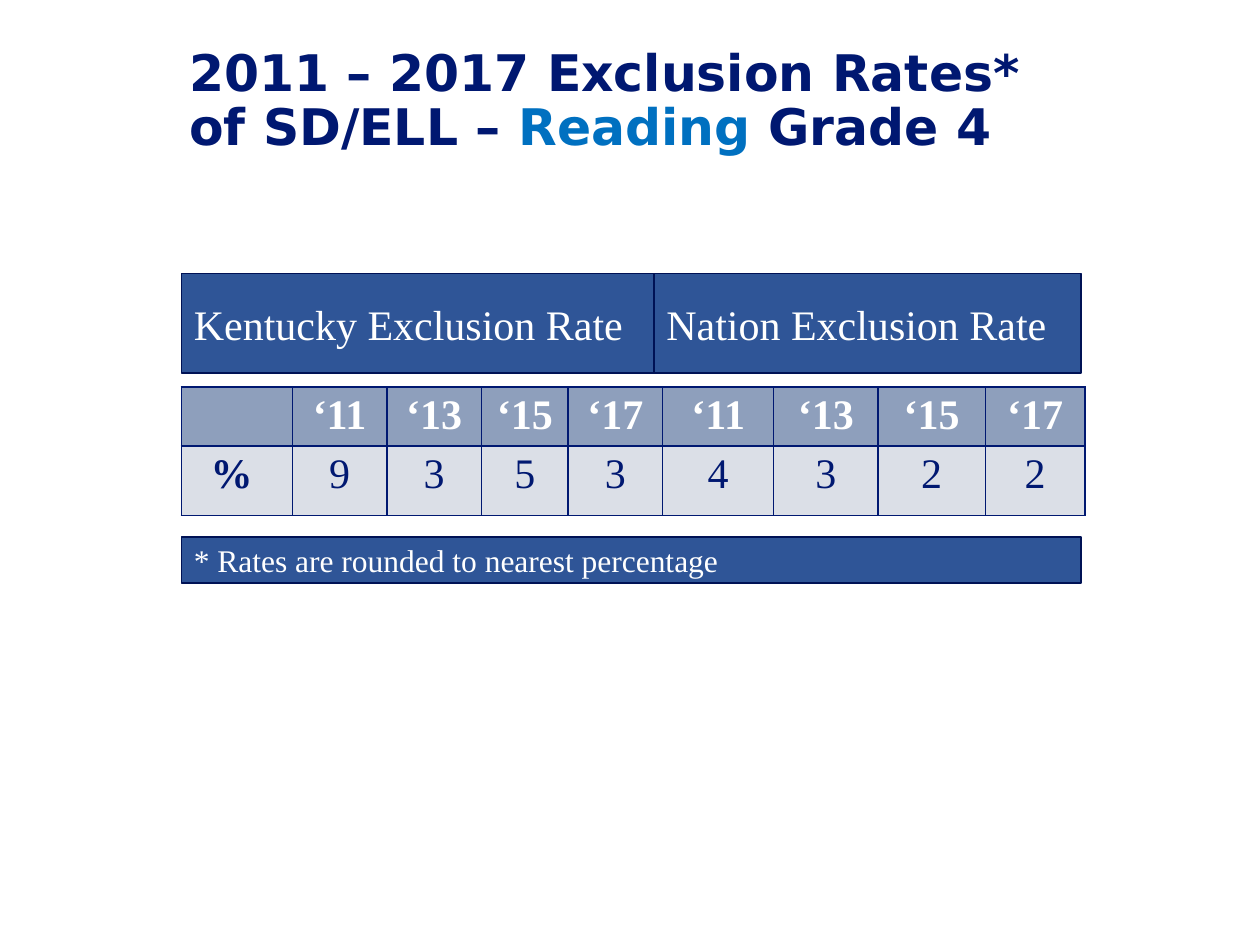
from dataclasses import dataclass

from lxml.etree import SubElement
from pptx import Presentation
from pptx.dml.color import RGBColor
from pptx.enum.shapes import MSO_SHAPE
from pptx.enum.text import MSO_ANCHOR, MSO_AUTO_SIZE, PP_ALIGN
from pptx.oxml.ns import qn
from pptx.util import Inches, Pt


@dataclass(frozen=True)
class Theme:
    navy: str = "001871"
    accent: str = "0070C0"
    bar: str = "2F5597"
    edge: str = "001255"
    head: str = "8E9FBC"
    body: str = "DBDFE7"
    white: str = "FFFFFF"
    sans: str = "DejaVu Sans"
    serif: str = "Times New Roman"
    title: float = 28.8
    text: float = 24
    note: float = 18


@dataclass(frozen=True)
class Bar:
    text: str
    left: float
    top: float
    width: float
    height: float
    size: float


@dataclass(frozen=True)
class Row:
    texts: list[str]
    height: float
    fill: str
    color: str
    bold: bool


THEME = Theme()
LEFT, WIDTH, SPLIT = 1.44, 7.14, 3.75
COLS = [0.88, 0.75, 0.75, 0.69, 0.75, 0.88, 0.83, 0.85, 0.79]
YEARS = ["‘11", "‘13", "‘15", "‘17"]
STATE, NATION = [9, 3, 5, 3], [4, 3, 2, 2]

BARS = [
    Bar("Kentucky Exclusion Rate", LEFT, 2.17, SPLIT, 0.79, THEME.text),
    Bar("Nation Exclusion Rate", LEFT + SPLIT, 2.17, WIDTH - SPLIT, 0.79, THEME.text),
    Bar("* Rates are rounded to nearest percentage", LEFT, 4.26, WIDTH, 0.37, THEME.note),
]
ROWS = [
    Row(["", *YEARS, *YEARS], 0.47, THEME.head, THEME.white, True),
    Row(["% ", *map(str, STATE + NATION)], 0.55, THEME.body, THEME.navy, False),
]


def rgb(color: str) -> RGBColor:
    return RGBColor.from_string(color)


def add_run(para, text: str, size: float, font: str, color: str, bold: bool = False) -> None:
    run = para.add_run()
    run.text = text
    run.font.size = Pt(size)
    run.font.name = font
    run.font.bold = bold
    run.font.color.rgb = rgb(color)


def add_bar(slide, bar: Bar) -> None:
    shape = slide.shapes.add_shape(
        MSO_SHAPE.RECTANGLE, Inches(bar.left), Inches(bar.top),
        Inches(bar.width), Inches(bar.height))
    shape.shadow.inherit = False
    shape.fill.solid()
    shape.fill.fore_color.rgb = rgb(THEME.bar)
    shape.line.color.rgb = rgb(THEME.edge)
    shape.line.width = Pt(1)
    frame = shape.text_frame
    frame.word_wrap = True
    frame.vertical_anchor = MSO_ANCHOR.MIDDLE
    para = frame.paragraphs[0]
    para.alignment = PP_ALIGN.LEFT
    add_run(para, bar.text, bar.size, THEME.serif, THEME.white)


def set_cell(cell, text: str, row: Row, bold: bool) -> None:
    cell.margin_left = cell.margin_right = Inches(0.07)
    cell.margin_top = cell.margin_bottom = Inches(0.04)
    # Borders come before the fill in the cell properties
    props = cell._tc.get_or_add_tcPr()
    for side in ("a:lnL", "a:lnR", "a:lnT", "a:lnB"):
        line = SubElement(props, qn(side), w=str(Pt(1)))
        solid = SubElement(line, qn("a:solidFill"))
        SubElement(solid, qn("a:srgbClr"), val=THEME.navy)
    cell.fill.solid()
    cell.fill.fore_color.rgb = rgb(row.fill)
    para = cell.text_frame.paragraphs[0]
    para.alignment = PP_ALIGN.CENTER
    if text:
        add_run(para, text, THEME.text, THEME.serif, row.color, bold)


def add_rates(slide) -> None:
    height = sum(row.height for row in ROWS)
    table = slide.shapes.add_table(
        len(ROWS), len(COLS), Inches(LEFT), Inches(3.07),
        Inches(WIDTH), Inches(height)).table
    for col, width in zip(table.columns, COLS):
        col.width = Inches(width)
    for r, row in enumerate(ROWS):
        table.rows[r].height = Inches(row.height)
        for c, text in enumerate(row.texts):
            set_cell(table.cell(r, c), text, row, row.bold or c == 0)


def set_title(slide) -> None:
    title = slide.shapes.title
    title.left, title.top = Inches(1.4), Inches(0.28)
    title.width, title.height = Inches(7.14), Inches(1.06)
    frame = title.text_frame
    frame.word_wrap = True
    frame.auto_size = MSO_AUTO_SIZE.NONE
    frame.vertical_anchor = MSO_ANCHOR.MIDDLE
    para = frame.paragraphs[0]
    para.alignment = PP_ALIGN.LEFT
    para.line_spacing = 0.9
    for text, color in [
        ("2011 – 2017 Exclusion Rates* of SD/ELL – ", THEME.navy),
        ("Reading ", THEME.accent),
        ("Grade 4", THEME.navy),
    ]:
        add_run(para, text, THEME.title, THEME.sans, color, True)


def main() -> None:
    deck = Presentation()
    deck.slide_width, deck.slide_height = Inches(10), Inches(7.5)
    slide = deck.slides.add_slide(deck.slide_layouts[5])
    # Title, rates table, then heading and note bars
    set_title(slide)
    add_rates(slide)
    for bar in BARS:
        add_bar(slide, bar)
    deck.save("out.pptx")


if __name__ == "__main__":
    main()
